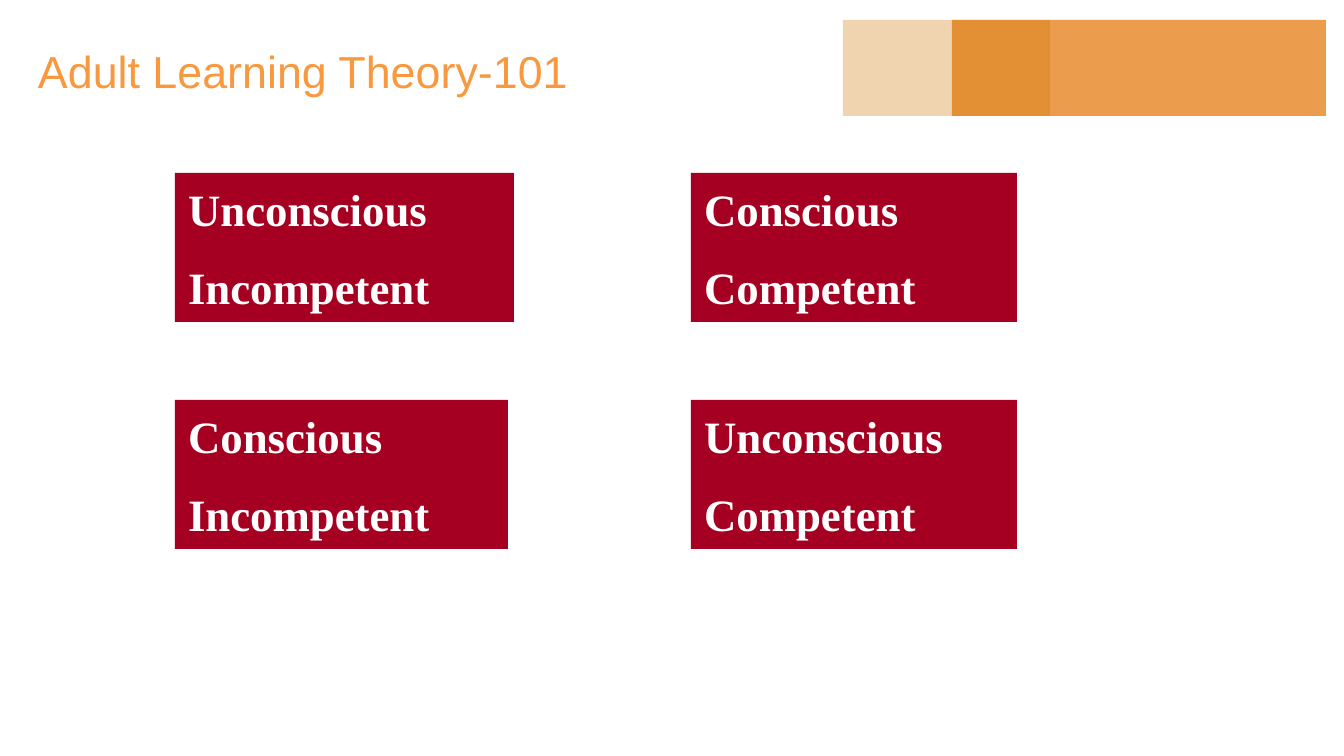
from lxml import etree
from pptx import Presentation, util as u
from pptx.dml.color import RGBColor
from pptx.enum import shapes, text
from pptx.oxml.ns import qn

SCALE = 914400 / 134.4


def px(n):
    return u.Emu(round(n * SCALE))


def paint(fill, color, alpha=100):
    """Fill with a hex colour; alpha is the opacity in percent."""
    fill.solid()
    fill.fore_color.rgb = RGBColor.from_string(color)
    if alpha < 100:
        node = fill._xPr.find(qn("a:solidFill"))[0]
        etree.SubElement(node, qn("a:alpha"), val=str(alpha * 1000))


def write(frame, lines, font="Arial", size=24, color="000000", bold=False,
          gap=0, pad=(13, 7)):
    """Set one paragraph per line; gap is points between them, pad is px."""
    frame.word_wrap = True
    frame.auto_size = text.MSO_AUTO_SIZE.NONE
    frame.vertical_anchor = text.MSO_ANCHOR.MIDDLE
    frame.margin_left = frame.margin_right = px(pad[0])
    frame.margin_top = frame.margin_bottom = px(pad[1])
    for i, line in enumerate(lines):
        para = frame.add_paragraph() if i else frame.paragraphs[0]
        para.alignment = text.PP_ALIGN.LEFT
        para.space_before = u.Pt(gap if i else 0)
        run = para.add_run()
        run.text = line
        run.font.name = font
        run.font.size = u.Pt(size)
        run.font.bold = bold
        run.font.color.rgb = RGBColor.from_string(color)


class Deck:
    accent = "F8993F"
    card = "A50021"
    light = "FFFFFF"
    serif = "Times New Roman"

    def __init__(self, wide, high):
        self.prs = Presentation()
        self.prs.slide_width, self.prs.slide_height = px(wide), px(high)
        self.slide = self.prs.slides.add_slide(self.prs.slide_layouts[5])

    def title(self, label, x, y, w, h):
        shape = self.slide.shapes.title
        shape.left, shape.top, shape.width, shape.height = map(px, (x, y, w, h))
        write(shape.text_frame, [label], color=self.accent, pad=(13, 13))

    def rect(self, x, y, w, h, color, alpha=100):
        shape = self.slide.shapes.add_shape(
            shapes.MSO_SHAPE.RECTANGLE, *map(px, (x, y, w, h)))
        shape.shadow.inherit = False
        shape.line.fill.background()
        paint(shape.fill, color, alpha)
        return shape

    def stage(self, words, x, y, w, h):
        shape = self.rect(x, y, w, h, self.card)
        write(shape.text_frame, words, font=self.serif, color=self.light,
              bold=True, gap=13)


def main():
    deck = Deck(1344, 756)
    deck.rect(952, 20, 374, 96, "EB9540", 93)
    deck.rect(843, 20, 207, 96, "D07700", 31)
    deck.title("Adult Learning Theory-101", 25, 7, 1210, 127)

    left, right = 175, 691
    top, low = 173, 400
    stages = [
        ("Unconscious", "Incompetent", left, top, 339),
        ("Conscious", "Incompetent", left, low, 333),
        ("Conscious", "Competent", right, top, 326),
        ("Unconscious", "Competent", right, low, 326),
    ]
    for aware, skill, x, y, w in stages:
        deck.stage([aware, skill], x, y, w, 149)
    deck.prs.save("out.pptx")


if __name__ == "__main__":
    main()
